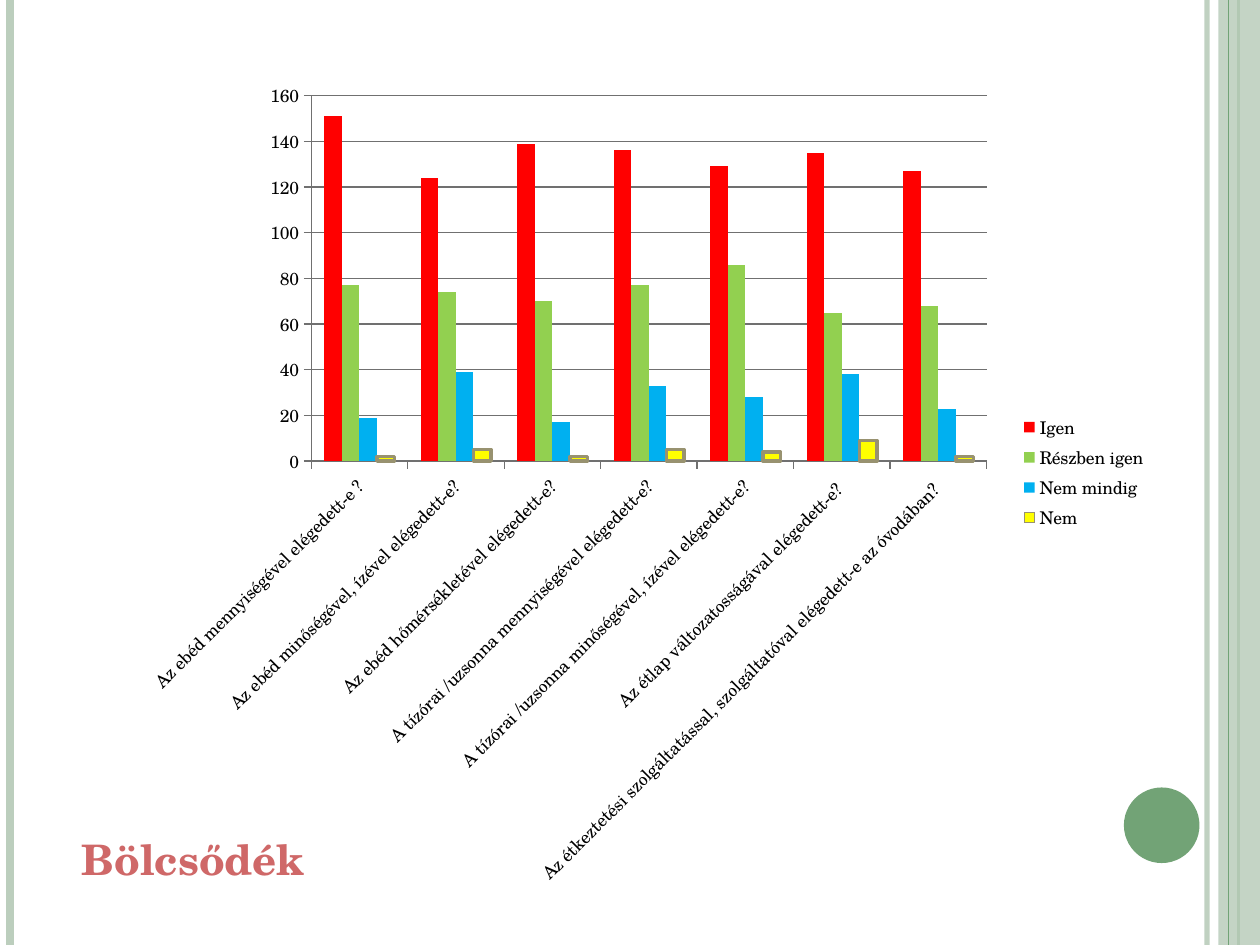
from lxml import etree
from pptx import Presentation
from pptx.chart.data import CategoryChartData
from pptx.dml.color import RGBColor
from pptx.enum import chart as ch, shapes, text
from pptx.oxml import parse_xml
from pptx.oxml.ns import qn, nsdecls
from pptx.util import Inches, Pt

FONT = "TeX Gyre Schola"
COLORS = {"pale": "BCCEBD", "green": "72A376", "title": "CF6868", "black": "000000",
          "grid": "707070", "igen": "FF0000", "reszben": "92D050",
          "nem_mindig": "00B0F0", "nem": "FFFF00", "outline": "989270"}
TITLE = "Bölcsődék"
QUESTIONS = [
    "Az ebéd mennyiségével elégedett-e ?",
    "Az ebéd minőségével, ízével elégedett-e?",
    "Az ebéd hőmérsékletével elégedett-e?",
    "A tízórai /uzsonna mennyiségével elégedett-e?",
    "A tízórai /uzsonna minőségével, ízével elégedett-e?",
    "Az étlap változatosságával elégedett-e? ",
    "Az étkeztetési szolgáltatással, szolgáltatóval elégedett-e az óvodában? ",
]
ANSWERS = [
    ("Igen", "igen", (151, 124, 139, 136, 129, 135, 127)),
    ("Részben igen ", "reszben", (77, 74, 70, 77, 86, 65, 68)),
    ("Nem mindig", "nem_mindig", (19, 39, 17, 33, 28, 38, 23)),
    ("Nem", "nem", (2, 5, 2, 5, 4, 9, 2)),
]
CHART_BOX = (0.55, 0.16, 8.7, 7.19)
PLOT_BOX = (2.47, 0.76, 5.36, 2.9)
LEGEND_BOX = (8.07, 3.25, 1.1, 1)
DECOR = [
    ("line", 9.58, "pale", 3, 93),
    ("line", 0.08, "pale", 4.5, 100),
    ("line", 9.83, "green", 1.5, 100),
    ("RECTANGLE", (9.67, 0, 0.33, 7.5), "pale", 0, 87),
    ("line", 9.75, "green", 0.75, 100),
    ("OVAL", (8.92, 6.25, 0.6, 0.6), "green", 0, 100),
]


def rgb(name):
    return RGBColor.from_string(COLORS[name])


def paint(fill, name):
    fill.solid()
    fill.fore_color.rgb = rgb(name)


def style(obj, values):
    for key, value in values.items():
        setattr(obj, key, value)


def set_alpha(sp, percent):
    if percent < 100:
        color = next(sp._element.spPr.iter(qn("a:srgbClr")))
        etree.SubElement(color, qn("a:alpha")).set("val", str(percent * 1000))


def add_decor(s, kind, place, color, width, alpha):
    if kind == "line":
        sp = s.shapes.add_connector(shapes.MSO_CONNECTOR.STRAIGHT, Inches(place), 0,
                                    Inches(place), Inches(7.5))
        sp.line.width = Pt(width)
        paint(sp.line.fill, color)
        etree.SubElement(sp._element.spPr, qn("a:effectLst"))
    else:
        sp = s.shapes.add_shape(shapes.MSO_SHAPE[kind], *map(Inches, place))
        sp.shadow.inherit = False
        sp.line.fill.background()
        paint(sp.fill, color)
    set_alpha(sp, alpha)


def set_layout(parent, index, box, inner=False):
    for old in parent.findall(qn("c:layout")):
        parent.remove(old)
    left, top, width, height = CHART_BOX
    x, y, w, h = box
    shares = ((x - left) / width, (y - top) / height, w / width, h / height)
    target = '<c:layoutTarget val="inner"/>' if inner else ""
    modes = "".join(f'<c:{k}Mode val="edge"/>' for k in "xy")
    sizes = "".join(f'<c:{k} val="{v:.5f}"/>' for k, v in zip("xywh", shares))
    parent.insert(index, parse_xml(
        f'<c:layout {nsdecls("c")}><c:manualLayout>{target}{modes}{sizes}'
        '</c:manualLayout></c:layout>'))


def add_survey_chart(s):
    data = CategoryChartData()
    data.categories = QUESTIONS
    for name, _, values in ANSWERS:
        data.add_series(name, values)
    chart = s.shapes.add_chart(ch.XL_CHART_TYPE.COLUMN_CLUSTERED,
                               *map(Inches, CHART_BOX), data).chart
    style(chart, {"has_title": False, "has_legend": True})
    style(chart.font, {"name": FONT, "size": Pt(10)})
    chart.font.color.rgb = rgb("black")

    plot = chart.plots[0]
    style(plot, {"gap_width": 150, "overlap": 0, "vary_by_categories": False})
    for series, (_, color, _) in zip(plot.series, ANSWERS):
        series.invert_if_negative = False
        paint(series.format.fill, color)
    outline = plot.series[-1].format.line
    outline.width = Pt(2)
    paint(outline.fill, "outline")

    cat, val = chart.category_axis, chart.value_axis
    style(val, {"minimum_scale": 0, "maximum_scale": 160, "major_unit": 20,
                "has_major_gridlines": True})
    for axis in (cat, val):
        axis.major_tick_mark = ch.XL_TICK_MARK.OUTSIDE
        axis.tick_labels.font.size = Pt(10)
    for part in (cat, val, val.major_gridlines):
        part.format.line.width = Pt(0.75)
        paint(part.format.line.fill, "grid")
    cat._element.txPr.find(qn("a:bodyPr")).set("rot", "-2700000")

    style(chart.legend, {"position": ch.XL_LEGEND_POSITION.RIGHT, "include_in_layout": False})
    set_layout(chart._chartSpace.chart.plotArea, 0, PLOT_BOX, True)
    set_layout(chart.legend._element, 1, LEGEND_BOX)


def add_title(s):
    sp = s.shapes.add_textbox(*map(Inches, (0.55, 6.57, 1.99, 0.5)))
    style(sp.text_frame, {"word_wrap": False, "auto_size": text.MSO_AUTO_SIZE.SHAPE_TO_FIT_TEXT})
    r = sp.text_frame.paragraphs[0].add_run()
    r.text = TITLE
    style(r.font, {"name": FONT, "size": Pt(24), "bold": True})
    r.font.color.rgb = rgb("title")


def main():
    prs = Presentation()
    style(prs, {"slide_width": Inches(10), "slide_height": Inches(7.5)})
    s = prs.slides.add_slide(prs.slide_layouts[6])
    for item in DECOR:
        add_decor(s, *item)
    add_survey_chart(s)
    add_title(s)
    prs.save("out.pptx")


if __name__ == "__main__":
    main()
